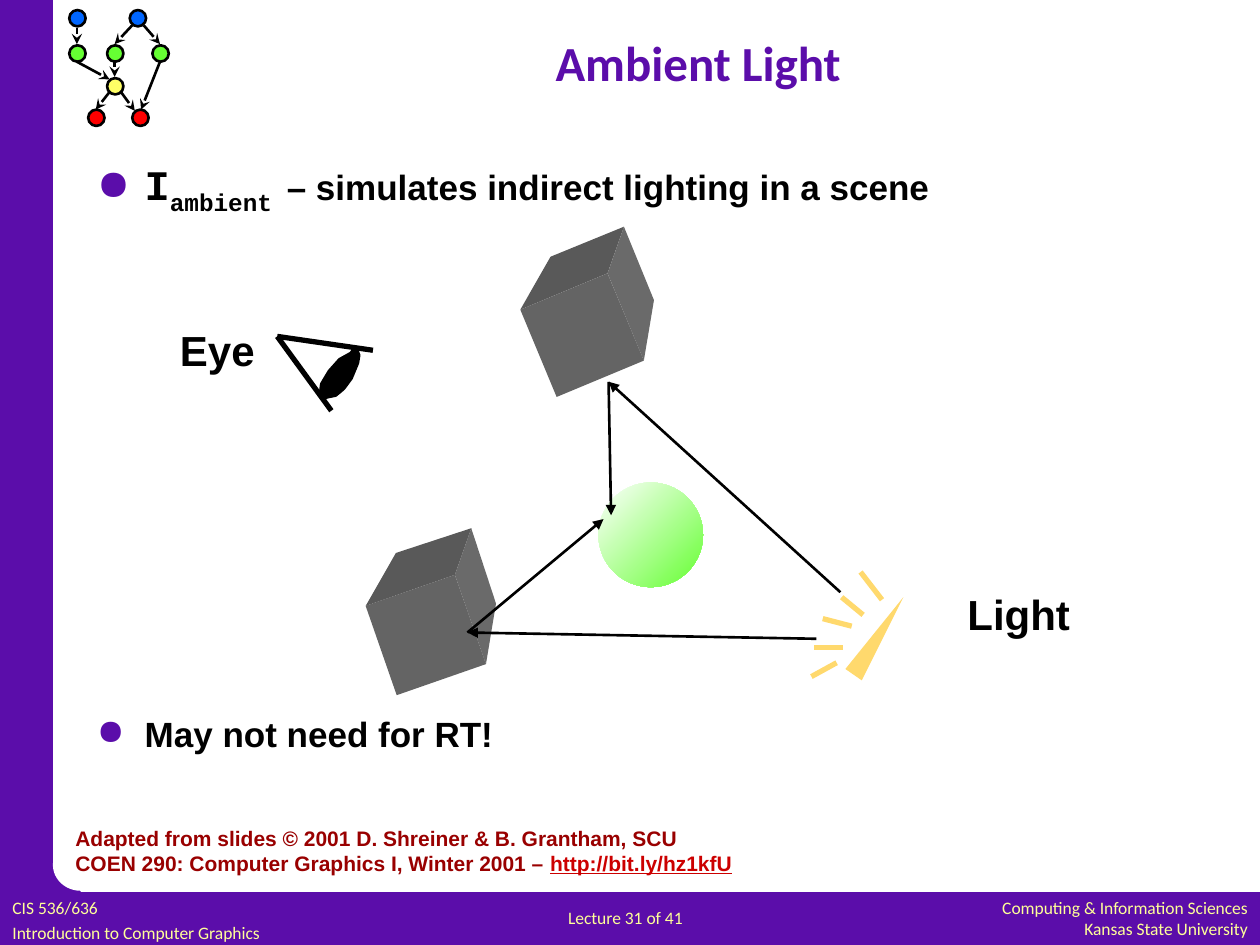
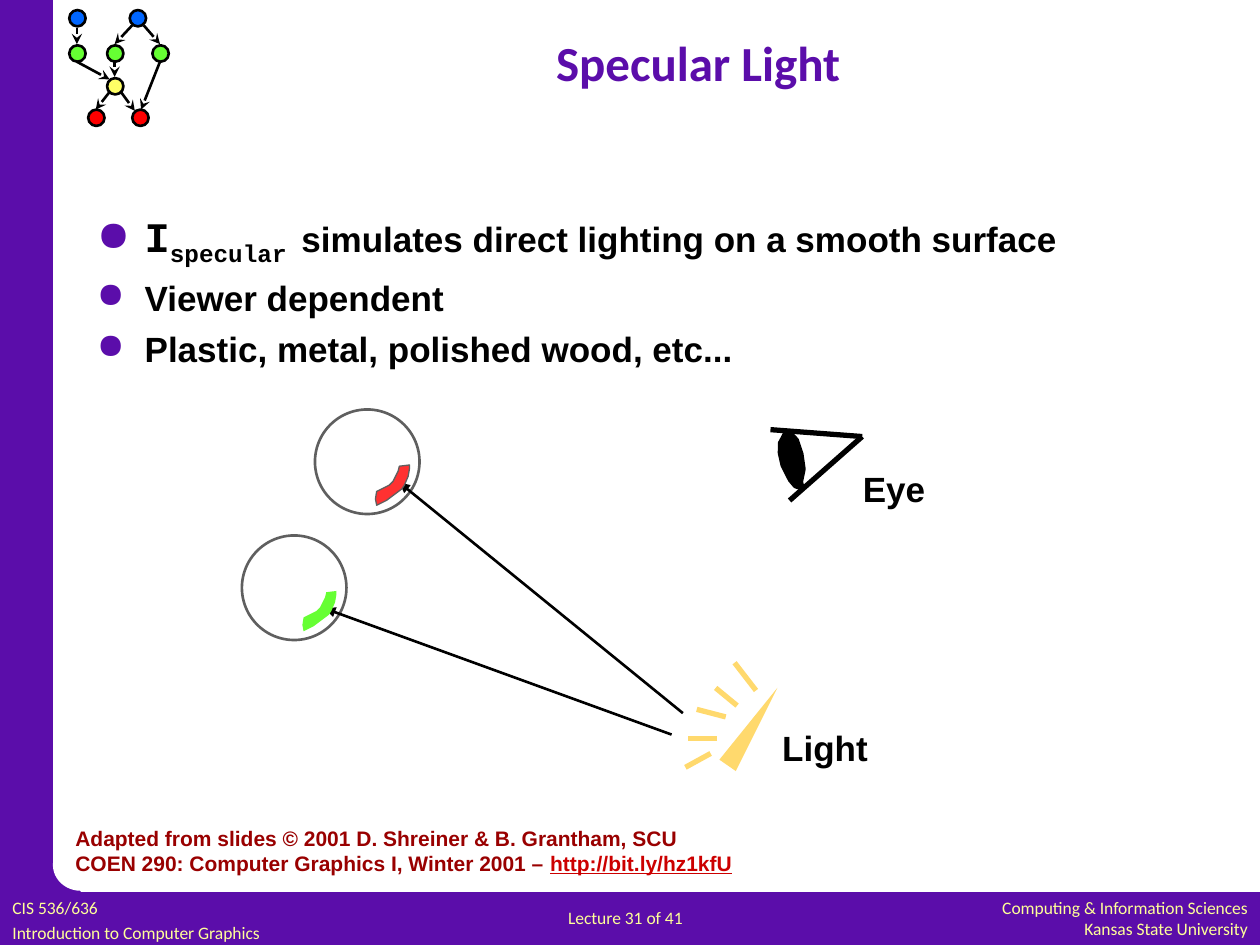
from dataclasses import dataclass
from math import cos, radians, sin

from lxml.etree import SubElement
from pptx import Presentation
from pptx.dml.color import RGBColor as RGB
from pptx.enum.shapes import MSO_CONNECTOR as LINK, MSO_SHAPE as SHAPE
from pptx.enum.text import MSO_ANCHOR as ANCHOR, PP_ALIGN as ALIGN
from pptx.oxml.ns import qn
from pptx.util import Inches, Pt


@dataclass(frozen=True)
class Theme:
    band: str = "5B0DAA"
    paper: str = "FFFFFF"
    ink: str = "000000"
    foot: str = "FFFF99"
    cite: str = "990000"
    link: str = "CC0000"
    lamp: str = "FFD96D"
    rim: str = "5F5F5F"
    blue: str = "0066FF"
    green: str = "66FF33"
    yellow: str = "FFFF66"
    red: str = "FF0000"
    glint: str = "FF3131"
    front: str = "646464"
    top: str = "595959"
    side: str = "6A6A6A"
    sans: str = "Arial"
    head: str = "Calibri"
    mono: str = "Courier New"
    title: int = 28
    big: int = 24
    body: int = 20
    note: int = 12
    small: int = 10
    thin: float = 1.5
    thick: float = 3


T = Theme()
TITLE = dict(name=T.head, size=T.title, bold=True, color=T.band)
FOOT = dict(name=T.head, size=T.small, color=T.foot)
BODY = dict(name=T.sans, size=T.body, bold=True, color=T.ink)
LABEL = BODY | dict(size=T.big)
MONO = LABEL | dict(name=T.mono)
SUB = MONO | dict(base="-25000")
CITE = BODY | dict(size=T.note, color=T.cite)
URL = CITE | dict(color=T.link, underline=True)


def style(run, form):
    for key, val in form.items():
        if key == "color":
            run.font.color.rgb = RGB.from_string(val)
        elif key == "base":
            run.font._element.set("baseline", val)
        else:
            setattr(run.font, key, Pt(val) if key == "size" else val)


def bullet(para):
    props = para._p.get_or_add_pPr()
    props.set("marL", str(Inches(0.38)))
    props.set("indent", str(Inches(-0.38)))
    tint = SubElement(props, qn("a:buClr"))
    SubElement(tint, qn("a:srgbClr"), val=T.band)
    SubElement(props, qn("a:buChar"), char="●")


def write(slide, box, paras, align=ALIGN.LEFT, anchor=ANCHOR.TOP, gaps=(), dots=False):
    frame = slide.shapes.add_textbox(*map(Inches, box)).text_frame
    frame.word_wrap = True
    frame.vertical_anchor = anchor
    for i, runs in enumerate(paras):
        para = frame.add_paragraph() if i else frame.paragraphs[0]
        para.alignment = align
        if i and gaps:
            para.space_before = Pt(gaps[i - 1])
        if dots:
            bullet(para)
        for text, form in runs:
            run = para.add_run()
            run.text = text
            style(run, form)


def paint(shape, fill=None, line=None, width=T.thin):
    shape.shadow.inherit = False
    for part, tint in ((shape.fill, fill), (shape.line.fill, line)):
        if tint:
            part.solid()
            part.fore_color.rgb = RGB.from_string(tint)
        else:
            part.background()
    if line:
        shape.line.width = Pt(width)
    return shape


def draw(slide, kind, box, **form):
    return paint(slide.shapes.add_shape(kind, *map(Inches, box)), **form)


def stroke(slide, start, end, tint=T.ink, width=T.thin, tip=None):
    line = slide.shapes.add_connector(LINK.STRAIGHT, *map(Inches, (*start, *end)))
    line.line.color.rgb = RGB.from_string(tint)
    line.line.width = Pt(width)
    if tip:
        SubElement(line.line._get_or_add_ln(), qn("a:tailEnd"), type=tip)
    SubElement(line._element.spPr, qn("a:effectLst"))


def shift(base, points):
    return [(base[0] + x, base[1] + y) for x, y in points]


def spin(mid, turn, points):
    c, s = cos(radians(turn)), sin(radians(turn))
    return shift(mid, [(x * c - y * s, x * s + y * c) for x, y in points])


def outline(slide, points, **form):
    first, *rest = [(Inches(x), Inches(y)) for x, y in points]
    pen = slide.shapes.build_freeform(*first)
    pen.add_line_segments(rest, close=True)
    return paint(pen.convert_to_shape(), **form)


def graph(slide, left, top):
    nodes = [(0, 0.28, T.green), (0, 0, T.blue), (0.3, 0.28, T.green),
             (0.48, 0, T.blue), (0.66, 0.28, T.green), (0.3, 0.54, T.yellow),
             (0.15, 0.79, T.red), (0.5, 0.79, T.red)]
    edges = [(0.06, 0.14, 0.06, 0.27), (0.5, 0.12, 0.36, 0.27),
             (0.59, 0.12, 0.72, 0.27), (0.06, 0.41, 0.32, 0.55),
             (0.36, 0.41, 0.36, 0.53), (0.72, 0.41, 0.57, 0.79),
             (0.41, 0.65, 0.52, 0.8), (0.32, 0.65, 0.21, 0.79)]
    for x, y, tint in nodes:
        draw(slide, SHAPE.OVAL, (left + x, top + y, 0.13, 0.13), fill=tint, line=T.ink)
    for x, y, u, v in edges:
        stroke(slide, *shift((left, top), [(x, y), (u, v)]), tip="stealth")


def frame(slide, title):
    for box in ((0, 7.08, 10, 0.42), (0, 0, 0.42, 7.5), (0.2, 6.85, 0.44, 0.44)):
        draw(slide, SHAPE.RECTANGLE, box, fill=T.band)
    draw(slide, SHAPE.OVAL, (0.42, 6.66, 0.44, 0.41), fill=T.paper)
    graph(slide, 0.55, 0.08)
    write(slide, (7.18, 7.07, 2.82, 0.43),
          [[("Computing & Information Sciences", FOOT)],
           [("Kansas State University", FOOT)]], ALIGN.RIGHT)
    write(slide, (0, 7.07, 2.95, 0.44),
          [[("CIS 536/636", FOOT)], [("Introduction to Computer Graphics", FOOT)]], gaps=[2])
    write(slide, (4.41, 7.15, 1.52, 0.27), [[("Lecture 31 of 41", FOOT)]])
    write(slide, (0.5, 6.5, 6, 0.5),
          [[("Adapted from slides © 2001 D. Shreiner & B. Grantham, SCU", CITE)],
           [("COEN 290: Computer Graphics I, Winter 2001 – ", CITE),
            ("http://bit.ly/hz1kfU", URL)]])
    write(slide, (1.25, 0.08, 8.58, 0.83), [[(title, TITLE)]], ALIGN.CENTER, ANCHOR.MIDDLE)


def points(slide, top, term, text, more, gaps):
    first = [("I", MONO), (term + " ", SUB), (text, BODY)]
    write(slide, (0.67, top, 8.5, 5.03), [first] + [[(item, BODY)] for item in more],
          gaps=gaps, dots=True)


def cube(slide, mid, turn, half=0.375):
    a, b, c, d = spin(mid, turn, [(-half, -half), (half, -half), (half, half), (-half, half)])
    far = [(x + u, y + v) for (x, y), (u, v)
           in zip((a, b, c), ((0.24, -0.42), (0.13, -0.37), (0.08, -0.48)))]
    for face, tint in (((a, b, c, d), T.front), ((a, far[0], far[1], b), T.top),
                       ((b, far[1], far[2], c), T.side)):
        outline(slide, face, fill=tint)


def eye(slide, mid, turn=0):
    tip, *ends = spin(mid, turn, [(-0.52, -0.31), (0.24, -0.2), (-0.09, 0.28)])
    for end in ends:
        stroke(slide, tip, end, width=T.thick)
    pupil = [(0.1, -0.21), (0.12, -0.16), (0.11, -0.1), (0.06, 0.02), (0, 0.1),
             (-0.06, 0.15), (-0.11, 0.16), (-0.15, 0.17), (-0.17, 0.15),
             (-0.16, 0.07), (-0.1, -0.03), (-0.02, -0.12), (0.07, -0.17)]
    outline(slide, spin(mid, turn, pupil), fill=T.ink, line=T.ink, width=T.thick)


def lamp(slide, base):
    rays = [(0.56, 0.22, 0.39, 0), (0.41, 0.34, 0.24, 0.2), (0.32, 0.43, 0.09, 0.37),
            (0.2, 0.72, 0, 0.83), (0.25, 0.6, 0.02, 0.6)]
    for x, y, u, v in rays:
        stroke(slide, *shift(base, [(x, y), (u, v)]), tint=T.lamp, width=T.thick)
    outline(slide, shift(base, [(0.4, 0.86), (0.73, 0.2), (0.27, 0.77)]), fill=T.lamp)


def ball(slide, left, top, **form):
    return draw(slide, SHAPE.OVAL, (left, top, 0.83, 0.83), **form)


def glint(slide, base, **form):
    arc = [(0.53, 0.74), (0.57, 0.72), (0.69, 0.63), (0.71, 0.6), (0.74, 0.53),
           (0.75, 0.47), (0.75, 0.44), (0.67, 0.45), (0.66, 0.49), (0.62, 0.57),
           (0.59, 0.6), (0.49, 0.65), (0.48, 0.71), (0.49, 0.76)]
    outline(slide, shift(base, arc), **form)


def ambient(slide):
    frame(slide, "Ambient Light")
    points(slide, 1.21, "ambient", "– simulates indirect lighting in a scene",
           ["May not need for RT!"], [284])
    fill = ball(slide, 4.75, 3.83).fill
    fill.gradient()
    fill.gradient_angle = 315
    for stop, tint in zip(fill.gradient_stops, (T.paper, T.green)):
        stop.color.rgb = RGB.from_string(tint)
    high, low = (4.83, 3.03), (3.71, 5.02)
    cube(slide, (4.62, 2.66), -22.6)
    cube(slide, (3.38, 5.04), -19.2)
    for start, end in (((6.67, 4.7), high), ((6.48, 5.07), low),
                       (high, (4.85, 4.09)), (low, (4.79, 4.12))):
        stroke(slide, start, end, tip="triangle")
    eye(slide, (2.72, 2.98))
    lamp(slide, (6.44, 4.54))
    write(slide, (1.33, 2.53, 1, 0.5), [[("Eye", LABEL)]])
    write(slide, (7.58, 4.62, 1.2, 0.5), [[("Light", LABEL)]])


def specular(slide):
    frame(slide, "Specular Light")
    points(slide, 1.62, "specular", "simulates direct lighting on a smooth surface",
           ["Viewer dependent", "Plastic, metal, polished wood, etc..."], [5, 5])
    balls = [(1.92, 4.25), (2.5, 3.25)]
    for spot in balls:
        ball(slide, *spot, line=T.rim)
    for start, end in (((5.33, 5.83), (2.58, 4.83)), ((5.42, 5.66), (3.17, 3.83))):
        stroke(slide, start, end, tip="triangle")
    glint(slide, balls[1], fill=T.glint, line=T.rim, width=0.75)
    glint(slide, balls[0], fill=T.green)
    eye(slide, (6.27, 3.66), 130.4)
    lamp(slide, (5.44, 5.26))
    write(slide, (6.75, 3.66, 0.9, 0.44), [[("Eye", BODY)]])
    write(slide, (6.11, 5.72, 1.1, 0.44), [[("Light", BODY)]])


def main():
    deck = Presentation()
    deck.slide_width, deck.slide_height = Inches(10), Inches(7.5)
    for build in (ambient, specular):
        build(deck.slides.add_slide(deck.slide_layouts[6]))
    deck.save("out.pptx")


if __name__ == "__main__":
    main()
